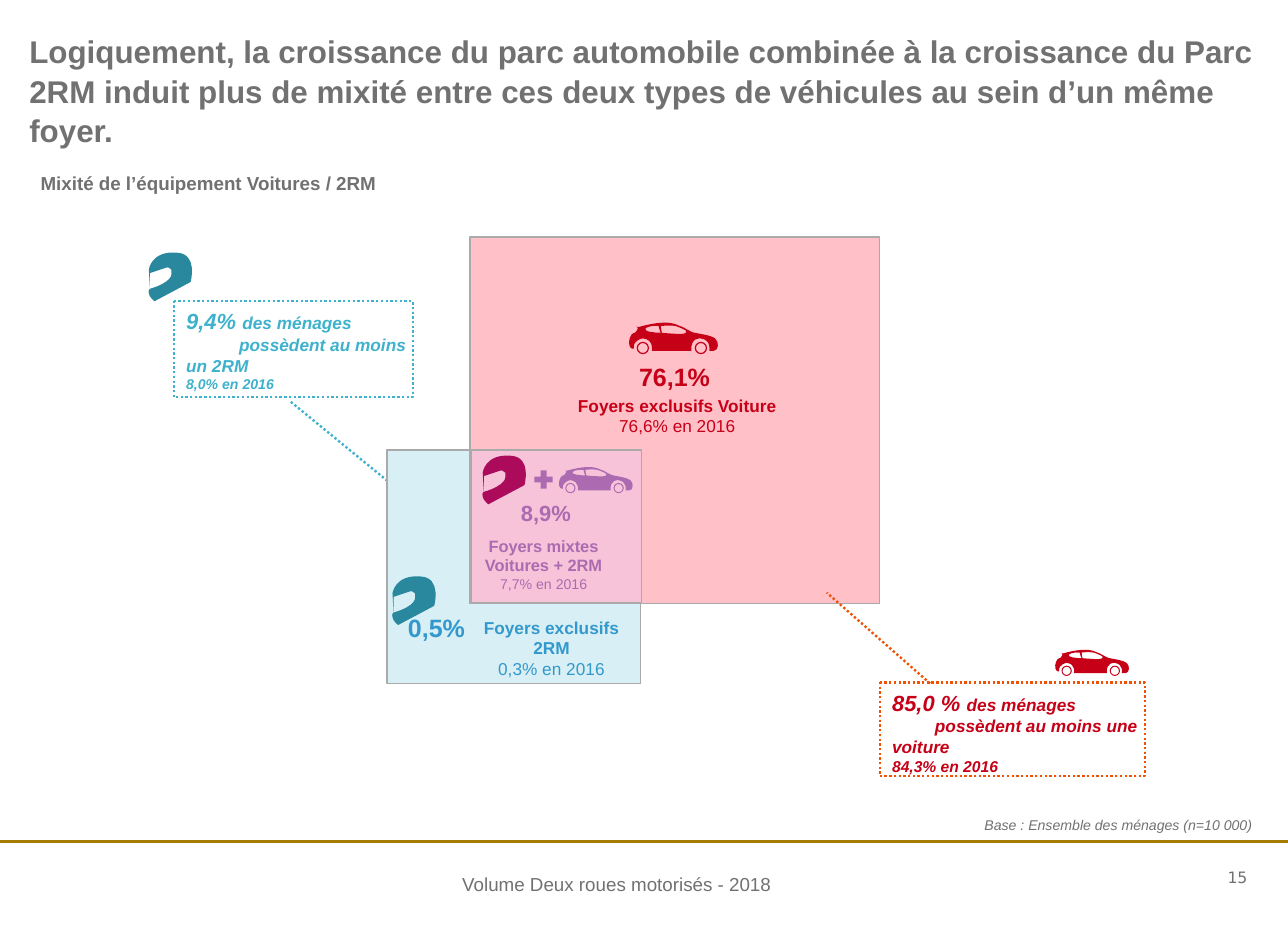
from lxml import etree
from pptx import Presentation
from pptx.dml.color import RGBColor
from pptx.enum.dml import MSO_LINE
from pptx.enum.shapes import MSO_CONNECTOR, MSO_SHAPE
from pptx.enum.text import MSO_ANCHOR, PP_ALIGN
from pptx.oxml.ns import qn
from pptx.util import Inches, Pt

LEFT, CENTER, RIGHT = PP_ALIGN.LEFT, PP_ALIGN.CENTER, PP_ALIGN.RIGHT
TOP, MIDDLE = MSO_ANCHOR.TOP, MSO_ANCHOR.MIDDLE
RECTANGLE, ROUNDED = MSO_SHAPE.RECTANGLE, MSO_SHAPE.ROUNDED_RECTANGLE
PLUS, CALLOUT = MSO_SHAPE.MATH_PLUS, MSO_SHAPE.LINE_CALLOUT_1
STRAIGHT, DOTTED = MSO_CONNECTOR.STRAIGHT, MSO_LINE.ROUND_DOT

# Grid of square cells, ten to the inch
COLUMNS, ROWS = 114.2, 82.7
COLORS = {
    "grey": "717171", "border": "AAAAAA", "gold": "A67C00",
    "red": "C50017", "pink": "FFC0C8", "orange": "EF5205",
    "blue": "3399CC", "pale blue": "D8EFF5", "cyan": "3EB1CC",
    "teal": "2A889E", "purple": "7A2280", "mauve": "EEC8F0",
    "magenta": "AC0B5C",
}
LABEL_INSETS = (1.1, 0.6, 1.1, 0.6)
HEADING_INSETS = (0, 2.6, 0, 0)

# Icon outlines in hundredths of an inch: a start, then lines (1 point) or curves (3 points)
HELMET_SIZE, CAR_SIZE = (45, 45), (81, 28)
HELMET = [
    [(26, 2), [(3, 0), (1, 17), (1, 17)], [(2, 34)], [(2, 34), (0, 35), (1, 38)],
     [(1, 41), (6, 45), (6, 45)], [(38, 28)], [(38, 28), (45, 3), (26, 2)]],
    [(2, 34), [(2, 20)], [(17, 15)], [(17, 15), (20, 15), (21, 17)], [(21, 21)],
     [(21, 21), (22, 28), (2, 34)]],
]
CAR = [
    [(77, 14), [(73, 11), (63, 10), (59, 9)], [(56, 9), (48, 3), (46, 3)],
     [(43, 2), (41, 0), (32, 0)], [(22, 0), (9, 4), (9, 4)], [(9, 4), (6, 3), (8, 4)],
     [(10, 5), (6, 9), (6, 9)], [(5, 9)], [(2, 10), (0, 16), (1, 20)],
     [(2, 24), (5, 23), (5, 23)], [(4, 15), (13, 14), (13, 14)],
     [(23, 15), (21, 25), (21, 25)], [(56, 25)], [(55, 13), (64, 14), (64, 14)],
     [(74, 15), (72, 25), (72, 25)], [(72, 25), (73, 25), (76, 25)],
     [(80, 25), (81, 17), (77, 14)]],
    [(16, 7), [(12, 5), (21, 2), (27, 3)], [(27, 3), (28, 8), (29, 9)],
     [(29, 9), (19, 9), (16, 7)]],
    [(46, 10), [(39, 10), (30, 9), (30, 9)], [(30, 9), (29, 6), (29, 3)],
     [(29, 3), (37, 2), (42, 3)], [(48, 5), (51, 7), (51, 7)], [(51, 7), (54, 10), (46, 10)]],
]
# Wheel circles as centre and radius
WHEELS = [(x, 22.5, radius) for x in (13, 64.5) for radius in (5.5, 4.4)]
FINE = 100


def cells(*counts):
    return [Inches(count / 10) for count in counts]


def color(name):
    return RGBColor.from_string(COLORS[name])


def write(shape, paragraphs, ink, align=LEFT, insets=LABEL_INSETS, anchor=TOP,
          wrap=True, font="Arial", spacing=None):
    """Each paragraph is (first-line indent in cells, runs); a run is (text, size, style)."""
    frame = shape.text_frame
    frame.word_wrap, frame.vertical_anchor = wrap, anchor
    for side, inset in zip(("left", "top", "right", "bottom"), cells(*insets)):
        setattr(frame, f"margin_{side}", inset)
    for index, (indent, runs) in enumerate(paragraphs):
        para = frame.paragraphs[0] if index == 0 else frame.add_paragraph()
        para.alignment = align
        if spacing:
            para.line_spacing = spacing
        if indent:
            para._p.get_or_add_pPr().set("indent", str(cells(indent)[0]))
        for text, size, style in runs:
            span = para.add_run()
            span.text = text
            values = {"name": font, "size": Pt(size), "bold": "b" in style, "italic": "i" in style}
            for name, value in values.items():
                setattr(span.font, name, value)
            span.font.color.rgb = color(ink)


def add_text(slide, place, paragraphs, ink, **options):
    box = slide.shapes.add_textbox(*cells(*place))
    write(box, [(0, runs) for runs in paragraphs], ink, **options)


def paint(shape, fill=None, line=None, width=1, opacity=None):
    shape.shadow.inherit = False
    if fill:
        shape.fill.solid()
        shape.fill.fore_color.rgb = color(fill)
    else:
        shape.fill.background()
    if line:
        shape.line.color.rgb = color(line)
        shape.line.width = Pt(width)
    else:
        shape.line.fill.background()
    if opacity:
        tint = shape._element.spPr.find(qn("a:solidFill"))[0]
        etree.SubElement(tint, qn("a:alpha")).set("val", str(opacity * 1000))


def add_shape(slide, kind, place, **look):
    shape = slide.shapes.add_shape(kind, *cells(*place))
    paint(shape, **look)
    return shape


def add_callout(slide, place, pointer, line, ink, share, words, indent, before):
    callout = add_shape(slide, CALLOUT, place, line=line, width=1.5)
    callout.line.dash_style = DOTTED
    for index, value in enumerate(pointer):
        callout.adjustments[index] = value
    paragraphs = [(0, [(share, 14, "bi"), ("des ménages", 11, "bi")]),
                  (indent, [(words, 11, "bi")]), (0, [before])]
    write(callout, paragraphs, ink, insets=(1.1, 0.6, 0.4, 0.6))


def draw(outline, tag, points=(), **values):
    step = etree.SubElement(outline, qn(f"a:{tag}"))
    for name, value in values.items():
        step.set(name, str(round(value)))
    for x, y in points:
        draw(step, "pt", x=x * FINE, y=y * FINE)


def add_icon(slide, left, top, size, contours, fill, scale=1, circles=()):
    width, height = (length * FINE for length in size)
    builder = slide.shapes.build_freeform(0, 0, scale=Inches(0.01) * scale / FINE)
    builder.add_line_segments([(width, 0), (width, height), (0, height)], close=True)
    icon = builder.convert_to_shape(*cells(left, top))
    paint(icon, fill=fill)
    # Curves take the place of the bounding frame
    outline = icon._element.spPr.find(".//" + qn("a:path"))
    for step in list(outline):
        outline.remove(step)
    for start, *segments in contours:
        draw(outline, "moveTo", [start])
        for points in segments:
            draw(outline, "lnTo" if len(points) == 1 else "cubicBezTo", points)
        draw(outline, "close")
    for x, y, radius in circles:
        draw(outline, "moveTo", [(x + radius, y)])
        for angle in (0, 10800000):
            draw(outline, "arcTo", wR=radius * FINE, hR=radius * FINE, stAng=angle, swAng=10800000)
        draw(outline, "close")


def add_frame(slide):
    rule = slide.shapes.add_connector(STRAIGHT, *cells(0, 74.6, COLUMNS, 74.6))
    rule.line.color.rgb, rule.line.width = color("gold"), Pt(1.5)
    etree.SubElement(rule._element.spPr, qn("a:effectLst"))
    add_text(slide, (40, 76.9, 29.6, 3), [[("Volume Deux roues motorisés - 2018", 12, "")]],
             "grey", insets=(1, 0.5, 1, 0.5), wrap=False)
    add_text(slide, (104.3, 76.3, 6.3, 3), [[("15", 10, "")]], "grey", align=RIGHT,
             insets=(0, 0, 0, 0), anchor=MIDDLE, font="DejaVu Sans")
    add_text(slide, (1.9, 71.8, 110.2, 2.7),
             [[("Base : Ensemble des ménages (n=10 000)", 9, "i")]], "grey", align=RIGHT)


def add_headings(slide):
    heading = add_shape(slide, ROUNDED, (2.6, 0.1, 108.6, 12.7))
    heading.adjustments[0] = 0
    title = ("Logiquement, la croissance du parc automobile combinée à la croissance du Parc 2RM "
             "induit plus de mixité entre ces deux types de véhicules au sein d’un même foyer.")
    write(heading, [(0, [(title, 20, "b")])], "grey", insets=HEADING_INSETS, spacing=1.05)
    add_text(slide, (3.6, 12.8, 110.6, 4.6), [[("Mixité de l’équipement Voitures / 2RM", 12, "b")]],
             "grey", insets=HEADING_INSETS, spacing=1.05)


def main():
    deck = Presentation()
    deck.slide_width, deck.slide_height = cells(COLUMNS, ROWS)
    slide = deck.slides.add_slide(deck.slide_layouts[6])
    add_frame(slide)
    add_headings(slide)

    # Household areas and their callouts
    add_callout(slide, (15.4, 26.7, 21.2, 8.5), (1.05, 0.49, 2.09, 1), "cyan", "cyan",
                "9,4% ", "possèdent au moins un 2RM", 4.7, ("8,0% en 2016", 9, "bi"))
    add_shape(slide, RECTANGLE, (34.3, 39.9, 22.5, 20.7), fill="pale blue", line="border")
    add_shape(slide, RECTANGLE, (41.7, 21, 36.3, 32.5), fill="pink", line="border")
    add_callout(slide, (78, 60.5, 23.5, 8.3), (0.01, 0.19, -0.96, -0.2), "orange", "red",
                "85,0 % ", "possèdent au moins une voiture", 3.8, ("84,3% en 2016", 10, "bi"))

    # Shares and labels of the areas
    labels = [
        ((30.8, 53.7, 15.8, 3.8), "blue", [[("0,5%", 16, "b")]]),
        ((41, 54.1, 15.8, 6.7), "blue",
         [[("Foyers exclusifs 2RM", 11, "b")], [("0,3% en 2016", 11, "")]]),
        ((40.5, 43.7, 15.8, 3.5), "purple", [[("8,9%", 14, "b")]]),
        ((39.6, 46.9, 17.2, 6.2), "purple",
         [[("Foyers mixtes Voitures + 2RM", 10.5, "b")], [("7,7% en 2016", 9, "")]]),
        ((51.9, 31.4, 15.8, 3.8), "red", [[("76,1%", 16, "b")]]),
        ((44.9, 34.4, 30.3, 4.8), "red",
         [[("Foyers exclusifs Voiture", 11, "b")], [("76,6% en 2016", 11, "")]]),
    ]
    for place, ink, paragraphs in labels:
        add_text(slide, place, paragraphs, ink, align=CENTER)

    # Cars, then the translucent overlap, then helmets
    add_shape(slide, PLUS, (47.1, 41.4, 2.2, 2.2), fill="purple")
    for left, top, fill, scale in ((93.5, 57.6, "red", 0.83), (49.5, 41.4, "purple", 0.83),
                                   (55.7, 28.6, "red", 1)):
        add_icon(slide, left, top, CAR_SIZE, CAR, fill, scale, WHEELS)
    add_shape(slide, RECTANGLE, (41.8, 39.9, 15.1, 13.5), fill="mauve", line="border", opacity=44)
    for left, top, fill in ((13.1, 22.2, "teal"), (34.7, 50.9, "teal"), (42.7, 40.2, "magenta")):
        add_icon(slide, left, top, HELMET_SIZE, HELMET, fill)
    deck.save("out.pptx")


if __name__ == "__main__":
    main()
